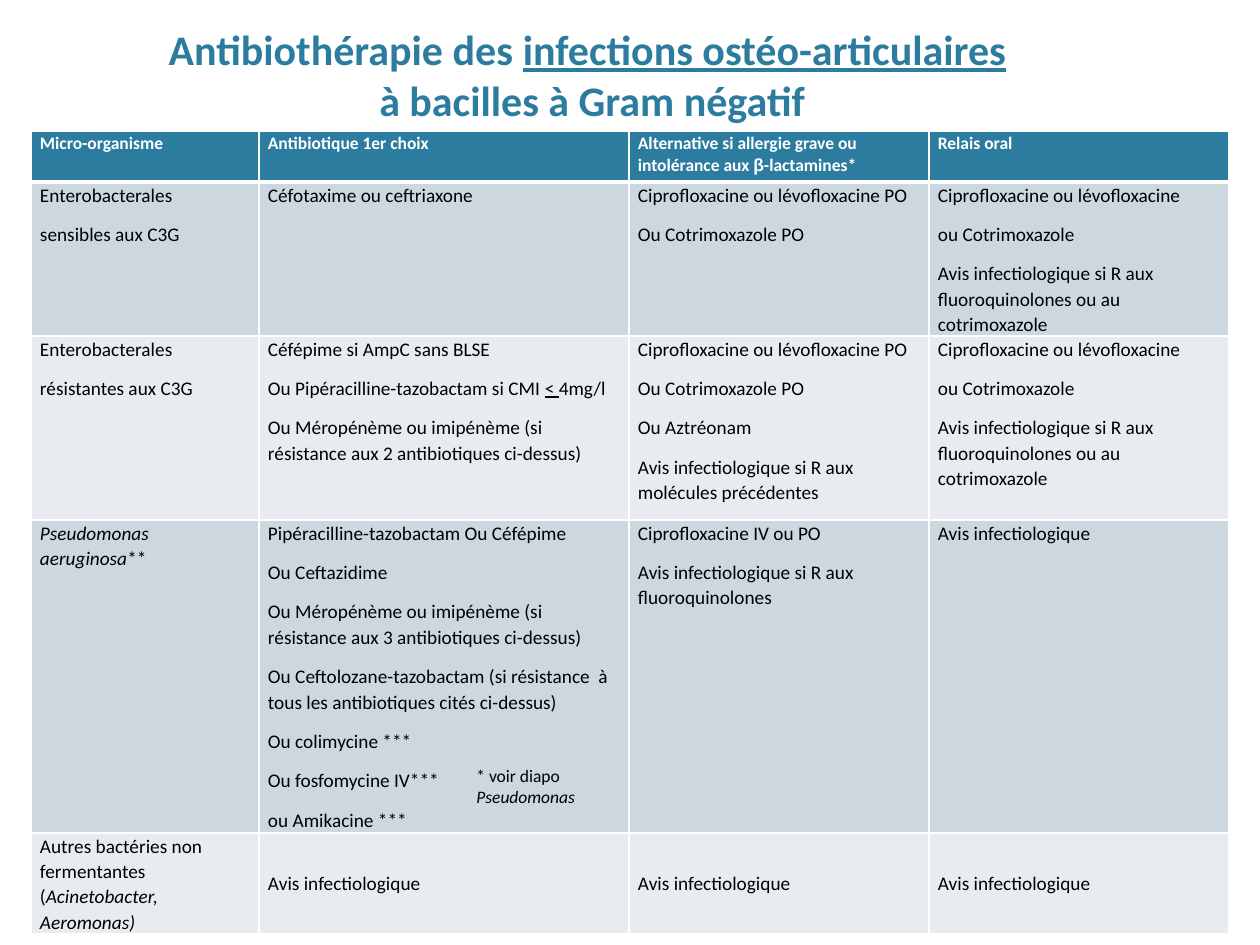
from dataclasses import dataclass

from lxml.etree import SubElement
from pptx import Presentation
from pptx.dml.color import RGBColor
from pptx.enum.text import MSO_ANCHOR as Anchor, PP_ALIGN as Align
from pptx.oxml.ns import qn
from pptx.util import Emu, Pt

EMU_PER_PX = 914400 / 126

TEAL = RGBColor(0x2C, 0x7C, 0x9F)
WHITE = RGBColor(0xFF, 0xFF, 0xFF)
BLACK = RGBColor(0x00, 0x00, 0x00)
BANDS = (RGBColor(0xCD, 0xD7, 0xDF), RGBColor(0xE8, 0xEC, 0xF0))


@dataclass(frozen=True)
class Span:
    text: str
    italic: bool = False
    underline: bool = False
    font: str = "Calibri"


@dataclass(frozen=True)
class Style:
    size: int
    color: RGBColor
    bold: bool = False


@dataclass(frozen=True)
class Box:
    left: int
    top: int
    width: int
    height: int


# A line is plain text or a tuple of spans; a cell is a list of lines.
Line = str | tuple[Span, ...]
Cell = list[Line]

TITLE_STYLE = Style(24, TEAL, bold=True)
HEADER_STYLE = Style(10, WHITE, bold=True)
BODY_STYLE = Style(11, BLACK)
NOTE_STYLE = Style(10, BLACK)

TITLE_BOX = Box(76, 15, 1023, 116)
TABLE_BOX = Box(31, 131, 1198, 803)
NOTE_BOX = Box(464, 759, 155, 55)
COLUMN_WIDTHS = (228, 370, 300, 300)
ROW_HEIGHTS = (51, 154, 184, 313, 101)
CELL_INSET = 9

ADVICE = "Avis infectiologique"
FLUOROQUINOLONES_ORAL = "Ciprofloxacine ou lévofloxacine PO"
ORAL_RELAY: Cell = [
    "Ciprofloxacine ou lévofloxacine",
    "ou Cotrimoxazole",
    "Avis infectiologique si R aux fluoroquinolones ou au cotrimoxazole",
]

ROWS: list[list[Cell]] = [
    [
        ["Micro-organisme"],
        ["Antibiotique 1er choix"],
        [(Span("Alternative si allergie grave ou intolérance aux "),
          Span("β", font="Arial"), Span("-lactamines*"))],
        ["Relais oral"],
    ],
    [
        ["Enterobacterales", "sensibles aux C3G"],
        ["Céfotaxime ou ceftriaxone"],
        [FLUOROQUINOLONES_ORAL, "Ou Cotrimoxazole PO"],
        ORAL_RELAY,
    ],
    [
        ["Enterobacterales", "résistantes aux C3G"],
        [
            "Céfépime si AmpC sans BLSE",
            (Span("Ou Pipéracilline-tazobactam si CMI "),
             Span("< ", underline=True), Span("4mg/l")),
            "Ou Méropénème ou imipénème (si résistance aux 2 antibiotiques ci-dessus)",
        ],
        [
            FLUOROQUINOLONES_ORAL,
            "Ou Cotrimoxazole PO",
            "Ou Aztréonam",
            "Avis infectiologique si R aux molécules précédentes",
        ],
        ORAL_RELAY,
    ],
    [
        [(Span("Pseudomonas aeruginosa", italic=True), Span("**"))],
        [
            "Pipéracilline-tazobactam Ou Céfépime",
            "Ou Ceftazidime",
            "Ou Méropénème ou imipénème (si résistance aux 3 antibiotiques ci-dessus)",
            "Ou Ceftolozane-tazobactam (si résistance  à tous les antibiotiques cités ci-dessus)",
            "Ou colimycine ***",
            "Ou fosfomycine IV***",
            "ou Amikacine ***",
        ],
        ["Ciprofloxacine IV ou PO", "Avis infectiologique si R aux fluoroquinolones"],
        [ADVICE],
    ],
    [
        [(Span("Autres bactéries non fermentantes ("),
          Span("Acinetobacter, Aeromonas)", italic=True))],
        [ADVICE],
        [ADVICE],
        [ADVICE],
    ],
]


def px(length: int) -> Emu:
    return Emu(round(length * EMU_PER_PX))


def place(box: Box) -> tuple[Emu, Emu, Emu, Emu]:
    return px(box.left), px(box.top), px(box.width), px(box.height)


def add_line(para, line: Line, style: Style) -> None:
    spans = (Span(line),) if isinstance(line, str) else line
    for span in spans:
        run = para.add_run()
        run.text = span.text
        font = run.font
        font.name = span.font
        font.size = Pt(style.size)
        font.bold = style.bold
        font.italic = span.italic
        font.underline = span.underline
        font.color.rgb = style.color


def add_text_frame(page, box: Box):
    frame = page.shapes.add_textbox(*place(box)).text_frame
    frame.word_wrap = True
    return frame


def add_title(page) -> None:
    frame = add_text_frame(page, TITLE_BOX)
    frame.vertical_anchor = Anchor.BOTTOM
    para = frame.paragraphs[0]
    para.alignment = Align.CENTER
    add_line(para, (Span("Antibiothérapie des "),
                    Span("infections ostéo-articulaires", underline=True)), TITLE_STYLE)
    para.add_line_break()
    add_line(para, " à bacilles à Gram négatif", TITLE_STYLE)


def set_borders(cell, top: int, bottom: int) -> None:
    """Draw white borders; top and bottom widths are in points."""
    properties = cell._tc.get_or_add_tcPr()
    for side, width in (("L", 1), ("R", 1), ("T", top), ("B", bottom)):
        border = SubElement(properties, qn(f"a:ln{side}"), w=str(Pt(width)))
        fill = SubElement(border, qn("a:solidFill"))
        SubElement(fill, qn("a:srgbClr"), val=str(WHITE))


def fill_cell(cell, lines: Cell, style: Style, color: RGBColor) -> None:
    cell.fill.solid()
    cell.fill.fore_color.rgb = color
    cell.margin_left = cell.margin_right = px(CELL_INSET)
    cell.margin_top = cell.margin_bottom = 0
    frame = cell.text_frame
    for index, line in enumerate(lines):
        para = frame.add_paragraph() if index else frame.paragraphs[0]
        para.line_spacing = 1.07
        para.space_after = Pt(8)
        add_line(para, line, style)


def add_treatment_table(page) -> None:
    table = page.shapes.add_table(len(ROWS), len(COLUMN_WIDTHS), *place(TABLE_BOX)).table
    for column, width in zip(table.columns, COLUMN_WIDTHS):
        column.width = px(width)
    for row, height in zip(table.rows, ROW_HEIGHTS):
        row.height = px(height)
    for r, row in enumerate(ROWS):
        style, color = (BODY_STYLE, BANDS[(r - 1) % 2]) if r else (HEADER_STYLE, TEAL)
        for c, lines in enumerate(row):
            cell = table.cell(r, c)
            set_borders(cell, top=3 if r == 1 else 1, bottom=3 if r == 0 else 1)
            fill_cell(cell, lines, style, color)
            if r == len(ROWS) - 1 and c:
                cell.vertical_anchor = Anchor.MIDDLE


def add_note(page) -> None:
    para = add_text_frame(page, NOTE_BOX).paragraphs[0]
    add_line(para, (Span("* voir diapo "), Span("Pseudomonas", italic=True)), NOTE_STYLE)


def main() -> None:
    deck = Presentation()
    deck.slide_width, deck.slide_height = px(1260), px(945)
    page = deck.slides.add_slide(deck.slide_layouts[6])
    add_title(page)
    add_treatment_table(page)
    add_note(page)
    deck.save("out.pptx")


if __name__ == "__main__":
    main()
